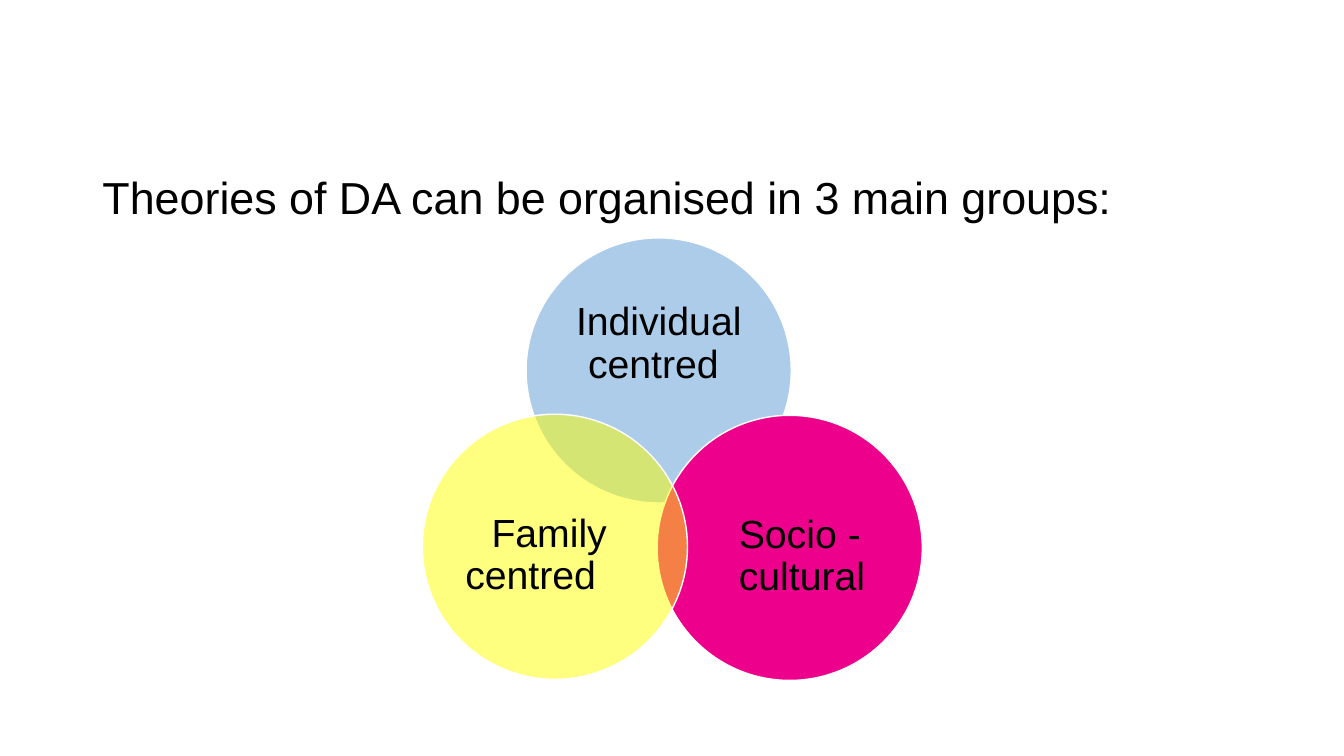
"""Build a slide with three overlapping circles of theory groups."""
from pptx import Presentation
from pptx.dml.color import RGBColor as Rgb
from pptx.enum.shapes import MSO_SHAPE as Shape
from pptx.enum.text import MSO_ANCHOR as Anchor, MSO_AUTO_SIZE as Fit, PP_ALIGN as Align
from pptx.oxml.ns import qn
from pptx.util import Inches, Pt
from lxml.etree import SubElement

TITLE = "Theories of DA can be organised in 3 main groups:"
# fmt: off
GROUPS = [
    {"text": "Individual centred ", "fill": "5B9BD5", "alpha": 50, "mid": (49.01, 49),
     "label": (49.01, 45.53, 14.48, 15.87), "align": Align.CENTER},
    {"text": "Socio - cultural", "fill": "EC008C", "alpha": 100, "mid": (58.76, 72.47),
     "label": (60.9, 73.67, 11.85, 19.33), "align": Align.LEFT},
    {"text": "Family centred ", "fill": "FFFF00", "alpha": 50, "mid": (41.29, 72.33),
     "label": (39.23, 73.53, 11.85, 19.33), "align": Align.RIGHT},
]
# fmt: on
FONT, INK, EDGE = "Arial", "000000", "FFFFFF"
WIDE, HIGH = Inches(13.33), Inches(7.5)
SIZE = (19.73, 35.07)


def paint(color, code):
    """Set a colour from a hex string."""
    color.rgb = Rgb.from_string(code)


def place(x, y, wide, high):
    """Turn a centre and size in percent into a slide box."""
    shares = ((x - wide / 2, WIDE), (y - high / 2, HIGH), (wide, WIDE), (high, HIGH))
    return [round(part * full / 100) for part, full in shares]


def write(frame, text, size, align):
    """Put one formatted paragraph into a text frame."""
    frame.word_wrap = True
    frame.auto_size = Fit.NONE
    frame.vertical_anchor = Anchor.MIDDLE
    para = frame.paragraphs[0]
    para.alignment, para.line_spacing = align, 0.9
    run = para.add_run()
    run.text = text
    run.font.name, run.font.size = FONT, Pt(size)
    paint(run.font.color, INK)


def add_group(slide, group):
    """Draw one circle and its label."""
    disc = slide.shapes.add_shape(Shape.OVAL, *place(*group["mid"], *SIZE))
    disc.shadow.inherit = False
    disc.fill.solid()
    paint(disc.fill.fore_color, group["fill"])
    if group["alpha"] < 100:
        tint = disc.fill._xPr.find(qn("a:solidFill"))[0]
        SubElement(tint, qn("a:alpha"), val=str(group["alpha"] * 1000))
    paint(disc.line.color, EDGE)
    disc.line.width = Pt(1)

    frame = slide.shapes.add_textbox(*place(*group["label"])).text_frame
    frame.margin_left = frame.margin_right = frame.margin_top = frame.margin_bottom = 0
    write(frame, group["text"], 28, group["align"])


def main():
    """Build and save the deck."""
    deck = Presentation()
    deck.slide_width, deck.slide_height = WIDE, HIGH
    slide = deck.slides.add_slide(deck.slide_layouts[5])
    title = slide.shapes.title
    title.left, title.top, title.width, title.height = place(50, 26.47, 86.25, 15.6)
    write(title.text_frame, TITLE, 32, Align.LEFT)
    for group in GROUPS:
        add_group(slide, group)
    deck.save("out.pptx")


if __name__ == "__main__":
    main()
